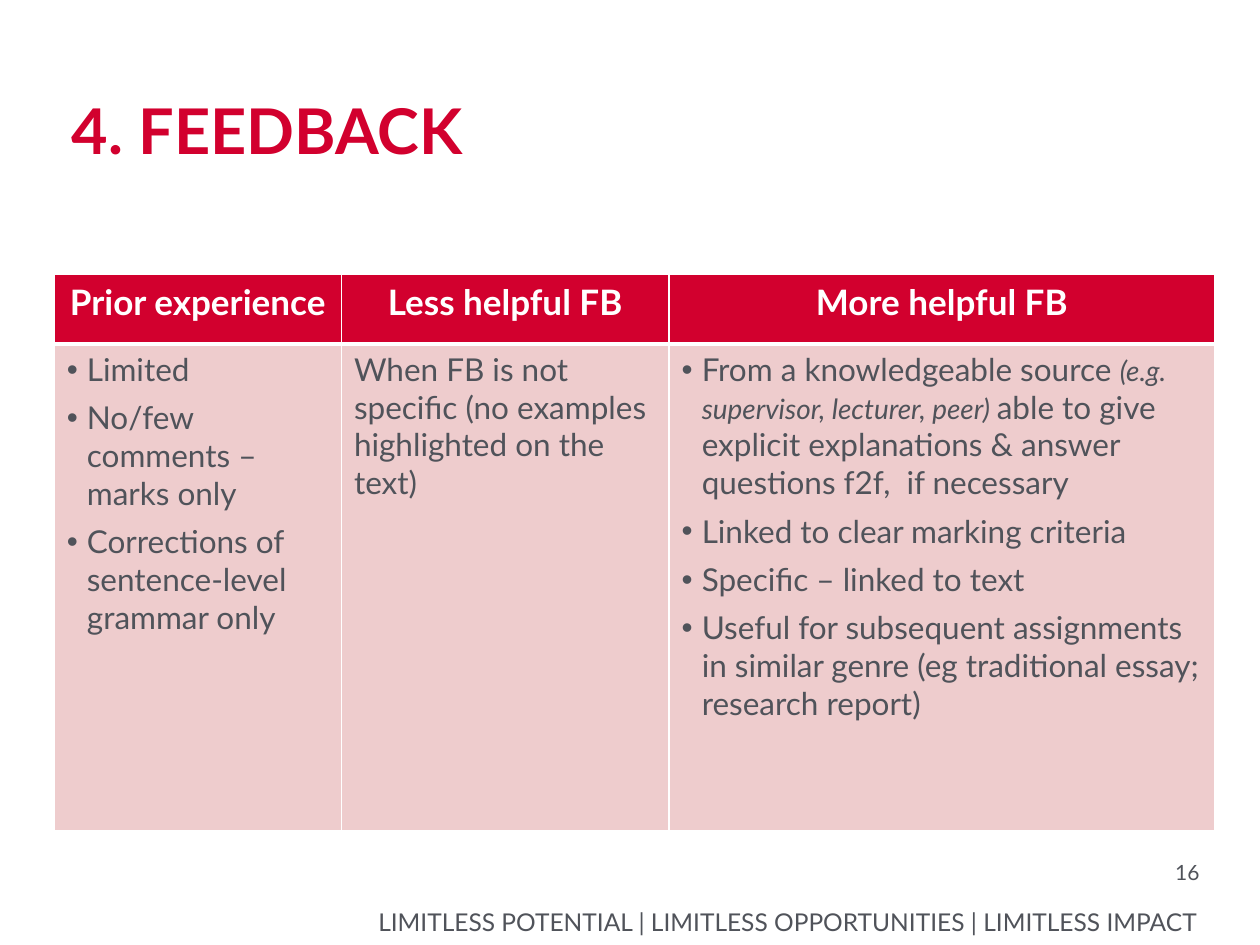
from pptx import Presentation
from pptx.dml.color import RGBColor
from pptx.enum.text import MSO_ANCHOR, PP_ALIGN
from pptx.oxml.ns import qn
from pptx.util import Pt
from lxml import etree

LEFT, CENTER, RIGHT = PP_ALIGN.LEFT, PP_ALIGN.CENTER, PP_ALIGN.RIGHT
TOP, BOTTOM = MSO_ANCHOR.TOP, MSO_ANCHOR.BOTTOM
SCALE = 9144
RED, PINK, GREY, WHITE = "D2002E", "EECCCD", "50535A", "FFFFFF"


def px(n):
    return n * SCALE


def color(code):
    return RGBColor.from_string(code)


class Deck:
    face = "Lato"
    indent = 16

    def __init__(self, wide, high):
        self.file = Presentation()
        self.file.slide_width, self.file.slide_height = px(wide), px(high)
        self.slide = self.file.slides.add_slide(self.file.slide_layouts[6])

    def style(self, para, size, tint, bold=False, align=LEFT):
        para.alignment = align
        for run in para.runs:
            font = run.font
            font.name, font.size, font.bold = self.face, Pt(size), bold
            font.color.rgb = color(tint)

    def text(self, box, words, size, tint, bold=False, align=LEFT,
             anchor=TOP, inset=None):
        frame = self.slide.shapes.add_textbox(*map(px, box)).text_frame
        frame.word_wrap = True
        frame.vertical_anchor = anchor
        if inset is not None:
            frame.margin_left = frame.margin_right = px(inset)
            frame.margin_top = frame.margin_bottom = px(inset)
        frame.text = words
        self.style(frame.paragraphs[0], size, tint, bold, align)

    def bullet(self, para):
        props = para._p.get_or_add_pPr()
        props.set("marL", str(px(self.indent)))
        props.set("indent", str(-px(self.indent)))
        etree.SubElement(props, qn("a:buFont"), typeface="Arial")
        etree.SubElement(props, qn("a:buChar"), char="•")

    def border(self, cell, **widths):
        props = cell._tc.get_or_add_tcPr()
        for side in "LRTB":
            width = Pt(widths.get(side, 1))
            line = etree.SubElement(props, qn("a:ln" + side), w=str(width))
            fill = etree.SubElement(line, qn("a:solidFill"))
            etree.SubElement(fill, qn("a:srgbClr"), val=WHITE)

    def paint(self, cell, tint):
        cell.fill.solid()
        cell.fill.fore_color.rgb = color(tint)

    def head(self, cell, words):
        self.border(cell, B=3)
        self.paint(cell, RED)
        cell.text_frame.text = words
        self.style(cell.text_frame.paragraphs[0], 20, WHITE, True, CENTER)

    def body(self, cell, items, marked):
        self.border(cell, T=3)
        self.paint(cell, PINK)
        frame = cell.text_frame
        for i, item in enumerate(items):
            para = frame.add_paragraph() if i else frame.paragraphs[0]
            if marked:
                self.bullet(para)
            para.space_after = Pt(6)
            for part in item:
                para.add_run().text = part
            self.style(para, 18, GREY)
            for aside in para.runs[1::2]:
                aside.font.size, aside.font.italic = Pt(16), True

    def table(self, left, top, cols, rows, data):
        box = map(px, (left, top, sum(cols), sum(rows)))
        grid = self.slide.shapes.add_table(len(rows), len(cols), *box).table
        for row, high in zip(grid.rows, rows):
            row.height = px(high)
        for i, (wide, (title, marked, items)) in enumerate(zip(cols, data)):
            grid.columns[i].width = px(wide)
            self.head(grid.cell(0, i), title)
            self.body(grid.cell(1, i), items, marked)


COLUMNS = [
    ("Prior experience", True, [
        ["Limited"],
        ["No/few comments – marks only"],
        ["Corrections of sentence-level grammar only"],
    ]),
    ("Less helpful FB", False, [
        ["When FB is not specific (no examples highlighted on the text)"],
    ]),
    ("More helpful FB", True, [
        ["From a knowledgeable source ",
         "(e.g. supervisor, lecturer, peer) ",
         "able to give explicit explanations & answer questions f2f,  if necessary"],
        ["Linked to clear marking criteria"],
        ["Specific – linked to text"],
        ["Useful for subsequent assignments in similar genre "
         "(eg traditional essay; research report)"],
    ]),
]


def main():
    deck = Deck(1000, 750)
    deck.text((211, 719, 740, 24),
              "LIMITLESS POTENTIAL | LIMITLESS OPPORTUNITIES | LIMITLESS IMPACT",
              14, GREY, align=RIGHT, anchor=BOTTOM, inset=0)
    deck.text((878, 682, 74, 28), "16", 12, GREY, align=RIGHT, inset=0)
    deck.table(43, 218, [228, 260, 433], [55, 386], COLUMNS)
    deck.text((47, 68, 917, 71), "4. FEEDBACK", 36, RED, bold=True)
    deck.file.save("out.pptx")


if __name__ == "__main__":
    main()
